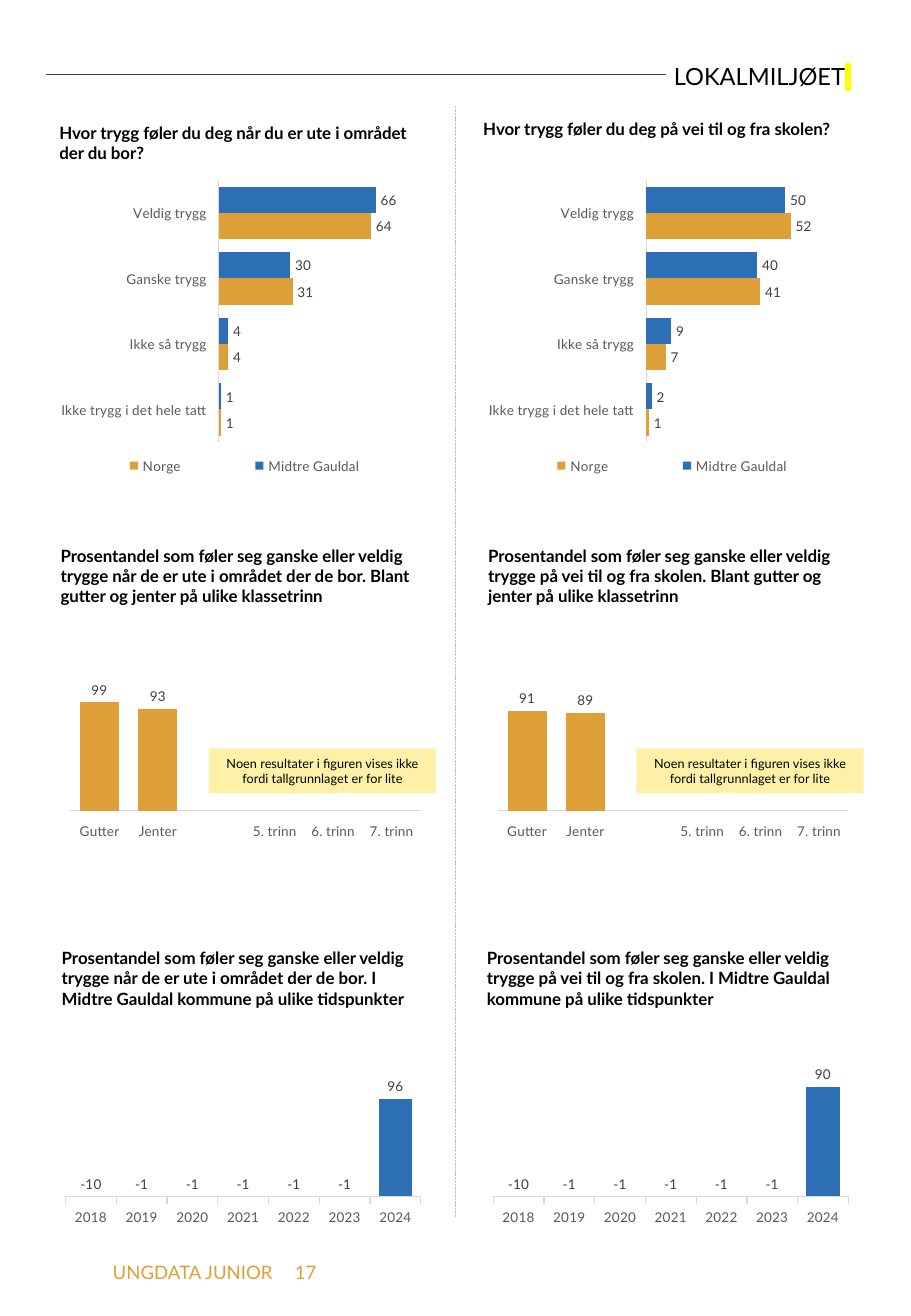
from dataclasses import dataclass

from lxml.etree import SubElement as Sub
from pptx import Presentation
from pptx.chart.data import CategoryChartData as ChartData
from pptx.dml.color import RGBColor as RGB
from pptx.enum.chart import XL_CHART_TYPE as Kind
from pptx.enum.chart import XL_LABEL_POSITION as Spot
from pptx.enum.chart import XL_LEGEND_POSITION as Side
from pptx.enum.chart import XL_TICK_LABEL_POSITION as Label
from pptx.enum.chart import XL_TICK_MARK as Tick
from pptx.enum.dml import MSO_LINE as Dash
from pptx.enum.shapes import MSO_CONNECTOR as Link
from pptx.enum.shapes import MSO_SHAPE as Shape
from pptx.enum.text import MSO_ANCHOR as Anchor
from pptx.enum.text import MSO_AUTO_SIZE as Fit
from pptx.enum.text import PP_ALIGN as Align
from pptx.oxml import parse_xml
from pptx.oxml.ns import nsdecls, qn
from pptx.util import Pt


@dataclass(frozen=True)
class Theme:
    """Colours, font and type sizes of the report."""
    font: str = "Lato"
    black: str = "000000"
    blue: str = "2C6FB4"
    gold: str = "DE9F37"
    pale: str = "FDF1A8"
    mark: str = "FFFF00"
    dark: str = "404040"
    gray: str = "595959"
    rule: str = "BFBFBF"
    axis: str = "D9D9D9"
    title: float = 14
    foot: float = 11
    head: float = 10
    chart: float = 8
    note: float = 7.5


T = Theme()
NOTE = "Noen resultater i figuren vises ikke fordi tallgrunnlaget er for lite"
SAFE = ["Veldig trygg", "Ganske trygg", "Ikke så trygg",
        "Ikke trygg i det hele tatt"]
GROUPS = ["Gutter", "Jenter", "", "5. trinn", "6. trinn", "7. trinn"]
YEARS = [str(year) for year in range(2018, 2025)]
LEAD = "Prosentandel som føler seg ganske eller veldig trygge "
HOME = dict(
    heads=[
        (0, 96, 324, 44,
         "Hvor trygg føler du deg når du er ute i området der du bor?"),
        (1, 444, 325, 61, LEAD + "når de er ute i området der de bor. "
         "Blant gutter og jenter på ulike klassetrinn"),
        (2, 775, 321, 77, LEAD + "når de er ute i området der de bor. "
         "I Midtre Gauldal kommune på ulike tidspunkter")],
    town=[66, 30, 4, 1], land=[64, 31, 4, 1], sexes=[99, 93], last=96)
ROAD = dict(
    heads=[
        (-3, 93, 325, 27, "Hvor trygg føler du deg på vei til og fra skolen?"),
        (1, 444, 325, 61, LEAD + "på vei til og fra skolen. "
         "Blant gutter og jenter på ulike klassetrinn"),
        (0, 775, 321, 61, LEAD + "på vei til og fra skolen. "
         "I Midtre Gauldal kommune på ulike tidspunkter")],
    town=[50, 40, 9, 2], land=[52, 41, 7, 1], sexes=[91, 89], last=90)


def px(*nums):
    """Turn px, one hundred to the inch, into EMU."""
    return [num * 9144 for num in nums]


def style(font, size, tint, bold=False):
    """Set the face, size and colour of a font."""
    font.name, font.size, font.bold = T.font, Pt(size), bold
    font.color.rgb = RGB.from_string(tint)


def write(para, text, size, tint, bold=False):
    """Add one styled run to a paragraph."""
    run = para.add_run()
    run.text = text
    style(run.font, size, tint, bold)
    return run


def label(slide, box, text, size, tint, bold=False):
    """Add a wrapping text box and give back its paragraph."""
    frame = slide.shapes.add_textbox(*px(*box)).text_frame
    frame.word_wrap = True
    para = frame.paragraphs[0]
    write(para, text, size, tint, bold)
    return para


def line(slide, ends, tint, width, dash=None):
    """Draw a straight rule without a shadow."""
    rule = slide.shapes.add_connector(Link.STRAIGHT, *px(*ends))
    rule.line.color.rgb = RGB.from_string(tint)
    rule.line.width = Pt(width)
    if dash:
        rule.line.dash_style = dash
    Sub(rule._element.spPr, qn("a:effectLst"))


def place(part, box, inner=False):
    """Fix the layout of a plot area or legend as parts of the chart."""
    for old in part.findall(qn("c:layout")):
        part.remove(old)
    rows = '<c:layoutTarget val="inner"/>' if inner else ""
    rows += "".join(f'<c:{key}Mode val="edge"/>' for key in "xy")
    rows += "".join(f'<c:{key} val="{num}"/>' for key, num in zip("xywh", box))
    node = parse_xml(f"<c:layout {nsdecls('c')}><c:manualLayout>{rows}"
                     "</c:manualLayout></c:layout>")
    if inner:
        part.insert(0, node)
    else:
        part.find(qn("c:legendPos")).addnext(node)


def graph(slide, box, kind, cats, rows, plot, lap=-10, tick=Tick.NONE):
    """Add a bar or column chart; each row is a name, values and colour."""
    data = ChartData(number_format="0")
    data.categories = cats
    for name, vals, _ in rows:
        data.add_series(name, vals)
    chart = slide.shapes.add_chart(kind, *px(*box), data).chart
    chart.has_title = chart.has_legend = False
    style(chart.font, T.chart, T.black)
    bars = chart.plots[0]
    bars.gap_width, bars.overlap, bars.vary_by_categories = 50, lap, False
    for row, (_, _, tint) in zip(bars.series, rows):
        row.invert_if_negative = False
        row.format.fill.solid()
        row.format.fill.fore_color.rgb = RGB.from_string(tint)
        tags = row.data_labels
        tags.show_value, tags.position = True, Spot.OUTSIDE_END
        tags.number_format, tags.number_format_is_linked = "0", False
        style(tags.font, T.chart, T.dark)
    axis = chart.category_axis
    axis.major_tick_mark, axis.minor_tick_mark = tick, Tick.NONE
    axis.tick_label_position = Label.LOW
    axis.format.line.color.rgb = RGB.from_string(T.axis)
    axis.format.line.width = Pt(0.75)
    style(axis.tick_labels.font, T.chart, T.gray)
    scale = chart.value_axis
    scale.visible = scale.has_major_gridlines = False
    scale.minimum_scale = 0
    place(chart._chartSpace.chart.plotArea, plot, True)
    return chart


def answers(slide, box, town, land):
    """Draw the bars for each answer, with a legend below."""
    rows = [("Midtre Gauldal", town, T.blue), ("Norge", land, T.gold)]
    chart = graph(slide, box, Kind.BAR_CLUSTERED, SAFE, rows,
                  (0.43, 0.02, 0.45, 0.84), 0)
    chart.category_axis.reverse_order = True
    chart.has_legend = True
    chart.legend.position = Side.TOP
    chart.legend.include_in_layout = False
    style(chart.legend.font, T.chart, T.gray)
    place(chart.legend._element, (0, 0.89, 1, 0.09))


def groups(slide, box, sexes):
    """Draw the columns for boys, girls and grades."""
    vals = sexes + [None] * (len(GROUPS) - len(sexes))
    chart = graph(slide, box, Kind.COLUMN_CLUSTERED, GROUPS,
                  [("Series 1", vals, T.gold)], (0.03, 0.19, 0.97, 0.64))
    chart.value_axis.maximum_scale = 120


def years(slide, box, last):
    """Draw the columns for each year."""
    vals = [-10] + [-1] * 5 + [last]
    graph(slide, box, Kind.COLUMN_CLUSTERED, YEARS,
          [("Series 1", vals, T.blue)], (0.03, 0.23, 0.97, 0.62),
          tick=Tick.OUTSIDE)


def notice(slide, box):
    """Add the pale box on missing results."""
    shape = slide.shapes.add_shape(Shape.RECTANGLE, *px(*box))
    shape.shadow.inherit = False
    shape.fill.solid()
    shape.fill.fore_color.rgb = RGB.from_string(T.pale)
    shape.line.fill.background()
    frame = shape.text_frame
    frame.word_wrap, frame.vertical_anchor = True, Anchor.MIDDLE
    frame.paragraphs[0].alignment = Align.CENTER
    write(frame.paragraphs[0], NOTE, T.note, T.black)


def column(slide, left, heads, town, land, sexes, last):
    """Fill one half of the page from its left edge."""
    for shift, top, wide, high, text in heads:
        label(slide, (left + shift, top, wide, high), text,
              T.head, T.black, True)
    answers(slide, (left + 10, 143, 305, 257), town, land)
    groups(slide, (left + 10, 527, 298, 169), sexes)
    years(slide, (left + 6, 847, 302, 162), last)
    notice(slide, (left + 133, 616, 187, 37))


def header(slide, box):
    """Set the page title and the rule beside it."""
    left, top, wide, high = box
    title = slide.shapes.title
    title.left, title.top, title.width, title.height = px(*box)
    frame = title.text_frame
    frame.auto_size, frame.vertical_anchor = Fit.NONE, Anchor.MIDDLE
    para = frame.paragraphs[0]
    para.alignment = Align.RIGHT
    write(para, "LOKALMILJØET", T.title, T.black)
    fill = write(para, " ", T.title, T.black)._r.rPr.find(qn("a:solidFill"))
    fill.addnext(parse_xml(f"<a:highlight {nsdecls('a')}>"
                           f'<a:srgbClr val="{T.mark}"/></a:highlight>'))
    line(slide, (left, top + 15, left + 510, top + 15), T.dark, 0.3)


def footer(slide, box):
    """Set the report name and page number on tab stops."""
    para = label(slide, box, "\tUNGDATA JUNIOR\t17", T.foot, T.gold)
    tabs = Sub(para._p.get_or_add_pPr(), qn("a:tabLst"))
    for stop in px(50, 200):
        Sub(tabs, qn("a:tab"), pos=str(stop), algn="l")


def main():
    """Build the page and save it."""
    deck = Presentation()
    deck.slide_width, deck.slide_height = px(750, 1083)
    slide = deck.slides.add_slide(deck.slide_layouts[5])
    header(slide, (38, 46, 673, 34))
    footer(slide, (33, 1033, 717, 29))
    line(slide, (375, 87, 375, 1002), T.rule, 0.5, Dash.SQUARE_DOT)
    for left, data in ((39, HOME), (391, ROAD)):
        column(slide, left, **data)
    deck.save("out.pptx")


if __name__ == "__main__":
    main()
